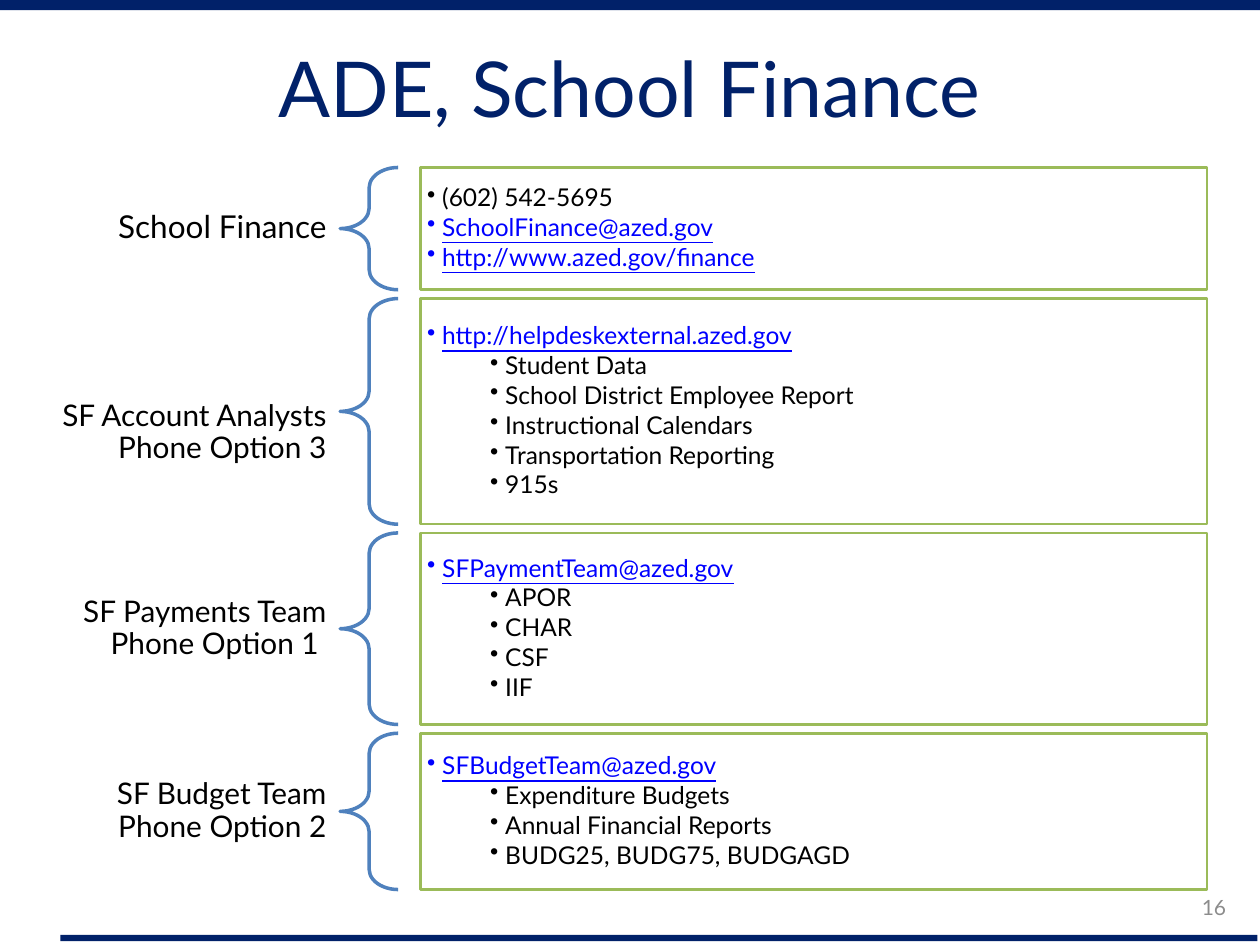
import pptx
import pptx.util
import pptx.dml.color
import pptx.enum.shapes
import pptx.enum.text
import pptx.oxml.ns
import lxml.etree

Inches = pptx.util.Inches
Pt = pptx.util.Pt
Shape = pptx.enum.shapes.MSO_SHAPE
Align = pptx.enum.text.PP_ALIGN
Anchor = pptx.enum.text.MSO_ANCHOR

NAVY, BLUE, GREEN = "012169", "4F81BD", "9BBB59"
LINK, BLACK, GRAY, WHITE = "0000FF", "000000", "8C8C8C", "FFFFFF"


def color(code):
    return pptx.dml.color.RGBColor.from_string(code)


def apply(item, values):
    """Set each named attribute of item."""
    for name, value in values.items():
        setattr(item, name, value)


def bullet(para, left, hang):
    props = para._p.get_or_add_pPr()
    props.set("marL", str(Inches(left)))
    props.set("indent", str(-Inches(hang)))
    mark = lxml.etree.SubElement(props, pptx.oxml.ns.qn("a:buChar"))
    mark.set("char", "•")


class Deck:
    face = "Lato"

    def __init__(self, slide):
        self.slide = slide
        self.shapes = slide.shapes

    def font(self, para, size, code, line=False):
        apply(para.font, {"name": self.face, "size": Pt(size), "underline": line})
        para.font.color.rgb = color(code)

    def frame(self, shape, pad):
        """Wrap and centre vertically, with (side, end) margins."""
        side, end = map(Inches, pad)
        apply(shape.text_frame, {
            "word_wrap": True, "vertical_anchor": Anchor.MIDDLE,
            "margin_left": side, "margin_right": side,
            "margin_top": end, "margin_bottom": end})
        return shape.text_frame

    def title(self, text, box):
        shape = self.shapes.title
        apply(shape, dict(zip(("left", "top", "width", "height"), map(Inches, box))))
        frame = self.frame(shape, (0.1, 0.05))
        frame.text = text
        para = frame.paragraphs[0]
        para.alignment = Align.CENTER
        self.font(para, 44, NAVY)

    def label(self, lines, box, size, code=BLACK, space=0.9):
        shape = self.shapes.add_textbox(*map(Inches, box))
        frame = self.frame(shape, (0.1, 0.04))
        frame.text = "\n".join(lines)
        for para in frame.paragraphs:
            apply(para, {"alignment": Align.RIGHT, "line_spacing": space})
            self.font(para, size, code)

    def shape(self, kind, box, fill=None, line=None, width=1):
        shape = self.shapes.add_shape(kind, *map(Inches, box))
        shape.shadow.inherit = False
        if fill:
            shape.fill.solid()
            shape.fill.fore_color.rgb = color(fill)
        else:
            shape.fill.background()
        if line:
            shape.line.color.rgb = color(line)
            shape.line.width = Pt(width)
        else:
            shape.line.fill.background()
        return shape

    def brace(self, box):
        shape = self.shape(Shape.LEFT_BRACE, box, line=BLUE, width=2)
        shape.adjustments[0] = 0.35
        shape.adjustments[1] = 0.5

    def panel(self, rows, box):
        """Draw a box of (level, text, is link) bullet rows."""
        shape = self.shape(Shape.RECTANGLE, box, WHITE, GREEN, 1.5)
        frame = self.frame(shape, (0.05, 0.05))
        frame.text = "\n".join(text for _, text, _ in rows)
        for i, (level, _, link) in enumerate(rows):
            para = frame.paragraphs[i]
            apply(para, {"alignment": Align.LEFT, "level": level,
                         "line_spacing": 0.9, "space_before": Pt(1.9 if i else 0)})
            bullet(para, 0.12 + 0.5 * (level - 1), 0.12)
            self.font(para, 14, LINK if link else BLACK, link)


def sub(*texts):
    return [(2, text, False) for text in texts]


# label lines, label size, label drop, height, rows
TEAMS = [
    (["School Finance"], 18, 0, 0.97,
     [(1, "(602) 542-5695", False),
      (1, "SchoolFinance@azed.gov", True),
      (1, "http://www.azed.gov/finance", True)]),
    (["SF Account Analysts", "Phone Option 3"], 17, 0.17, 1.79,
     [(1, "http://helpdeskexternal.azed.gov", True)]
     + sub("Student Data", "School District Employee Report",
           "Instructional Calendars", "Transportation Reporting", "915s")),
    (["SF Payments Team", "Phone Option 1 "], 17, 0, 1.52,
     [(1, "SFPaymentTeam@azed.gov", True)]
     + sub("APOR", "CHAR", "CSF", "IIF")),
    (["SF Budget Team", "Phone Option 2"], 17, 0, 1.24,
     [(1, "SFBudgetTeam@azed.gov", True)]
     + sub("Expenditure Budgets", "Annual Financial Reports",
           "BUDG25, BUDG75, BUDGAGD")),
]


def main():
    show = pptx.Presentation()
    apply(show, {"slide_width": Inches(10), "slide_height": Inches(7.5)})
    deck = Deck(show.slides.add_slide(show.slide_layouts[5]))

    for bar in ((0, 0, 10, 0.08), (0.48, 7.42, 9.5, 0.05)):
        deck.shape(Shape.RECTANGLE, bar, NAVY)
    deck.label(["16"], (7.5, 7, 2.33, 0.4), 12, GRAY, 1)
    deck.title("ADE, School Finance", (0.5, 0.25, 9, 0.87))

    top, gap, tall = 1.33, 0.07, 0.7
    for lines, size, drop, high, rows in TEAMS:
        mid = top + high / 2 + drop
        deck.label(lines, (0.29, mid - tall / 2, 2.4, tall), size)
        deck.brace((2.7, top, 0.46, high))
        deck.panel(rows, (3.34, top, 6.24, high))
        top += high + gap

    show.save("out.pptx")


if __name__ == "__main__":
    main()
